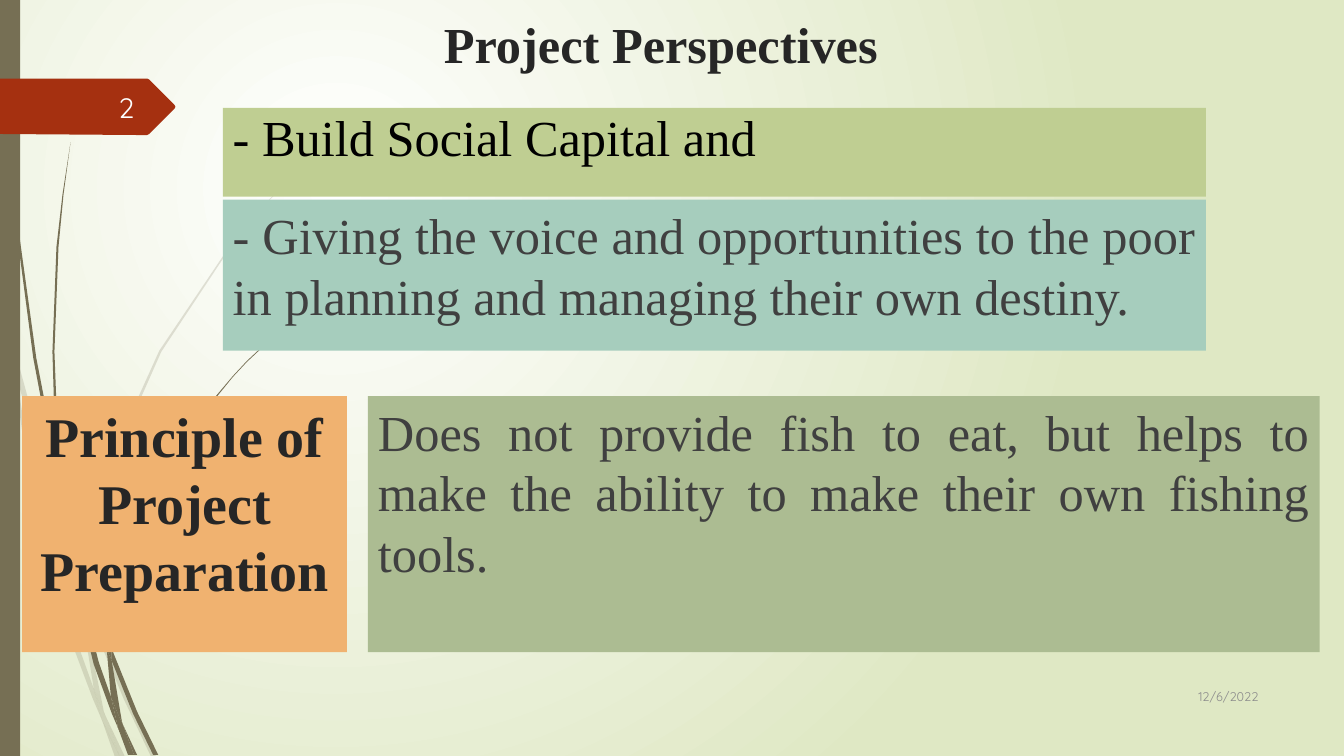
from lxml import etree
from pptx import Presentation
from pptx.dml.color import RGBColor
from pptx.enum.shapes import MSO_SHAPE
from pptx.enum.text import MSO_ANCHOR, PP_ALIGN
from pptx.oxml.ns import qn
from pptx.util import Inches, Pt

RECTANGLE = MSO_SHAPE.RECTANGLE
TOP, MIDDLE = MSO_ANCHOR.TOP, MSO_ANCHOR.MIDDLE
CENTER, RIGHT, JUSTIFY = PP_ALIGN.CENTER, PP_ALIGN.RIGHT, PP_ALIGN.JUSTIFY

WHITE = RGBColor(0xFF, 0xFF, 0xFF)
PALE_GREEN = RGBColor(0xDF, 0xE8, 0xC4)
BARK = RGBColor(0x76, 0x6F, 0x54)
RUST = RGBColor(0xA5, 0x30, 0x10)
LIME = RGBColor(0xBF, 0xCE, 0x92)
TEAL = RGBColor(0xA6, 0xCD, 0xBD)
ORANGE = RGBColor(0xF0, 0xB2, 0x70)
SAGE = RGBColor(0xAC, 0xBC, 0x92)
BLACK = RGBColor(0, 0, 0)
HEADING = RGBColor(0x26, 0x26, 0x26)
BODY = RGBColor(0x40, 0x40, 0x40)
GRAY = RGBColor(0x8C, 0x8C, 0x8C)
NUMBER = RGBColor(0xFE, 0xFF, 0xFF)

SERIF, SANS = "Times New Roman", "Quicksand"

# The grid has square cells; outlines are given in hundredths of a cell.
COLUMNS, ROWS = 13.33, 7.5
CELL = Inches(1)
FINE_CELL = CELL // 100

FAINT_STALKS = (
    ((11, 350), (9, 322), (0, 282), (0, 299), (10, 344)),
    ((58, 522), (84, 599), (85, 586), (62, 520), (14, 345), (17, 376)),
    ((92, 607), (88, 596), (88, 610), (123, 694), (150, 751), (155, 751),
     (127, 692)),
    ((119, 751), (124, 751), (105, 711)),
    ((93, 683), (70, 619), (31, 469), (17, 376), (11, 350), (28, 470),
     (65, 621), (92, 693), (101, 714), (99, 707)),
    ((84, 599), (87, 646), (93, 683), (96, 692), (105, 711), (103, 706),
     (91, 646), (88, 610), (88, 608)),
    ((88, 584), (110, 462), (160, 349), (229, 245), (268, 198), (290, 175),
     (312, 154), (312, 153), (289, 175), (268, 197), (228, 244), (158, 348),
     (107, 461), (85, 584), (85, 586), (88, 596)),
    ((101, 714), (114, 751), (119, 751)),
    ((96, 692), (93, 683), (99, 707), (101, 714), (119, 751), (105, 711)),
)
DARK_STALKS = (
    ((7, 110), (17, 233), (33, 355), (56, 477), (57, 481), (55, 457),
     (55, 453), (36, 355), (19, 232), (8, 109), (5, 48), (4, 0), (3, 0),
     (4, 48)),
    ((113, 649), (110, 641), (111, 656), (132, 708), (152, 749), (157, 749),
     (136, 706)),
    ((110, 691), (98, 657), (72, 556), (64, 505), (57, 477), (68, 557),
     (93, 659), (111, 708), (117, 722), (116, 717)),
    ((60, 472), (58, 453), (54, 349), (58, 245), (63, 193), (70, 141),
     (62, 193), (56, 245), (52, 349), (55, 449)),
    ((133, 749), (136, 749), (122, 719)),
    ((111, 633), (125, 552), (158, 476), (205, 406), (231, 374), (245, 359),
     (261, 344), (260, 344), (245, 358), (231, 373), (204, 405), (156, 474),
     (122, 551), (106, 631), (110, 641)),
    ((117, 722), (127, 749), (131, 749)),
    ((106, 645), (110, 691), (116, 706), (122, 719), (121, 716), (111, 656),
     (109, 651)),
    ((106, 645), (109, 651), (111, 656), (110, 641), (106, 631), (106, 633)),
    ((116, 706), (110, 691), (116, 717), (117, 722), (130, 749), (133, 749),
     (122, 719)),
)
NUMBER_TAG = ((173, 108), (148, 133), (146, 134), (136, 134), (0, 133),
              (0, 78), (146, 78), (148, 79), (173, 104), (174, 106))


class SlideBuilder:
    def __init__(self, page):
        self.page = page

    def background(self, inner, outer):
        """Fill the page with a circular gradient centred in its upper left."""
        fill = self.page.background.fill
        fill.gradient()
        for stop, color in zip(fill.gradient_stops, (inner, outer)):
            stop.color.rgb = color
        gradient = self.page.element.find(".//" + qn("a:gradFill"))
        gradient.remove(gradient.find(qn("a:lin")))
        circle = etree.SubElement(gradient, qn("a:path"))
        circle.set("path", "circle")
        center = etree.SubElement(circle, qn("a:fillToRect"))
        for side, share in zip("ltrb", (50, 50, 100, 100)):
            center.set(side, str(share * 1000))

    def paint(self, shape, color, opacity=100):
        shape.shadow.inherit = False
        shape.fill.solid()
        shape.fill.fore_color.rgb = color
        shape.line.fill.background()
        if opacity < 100:
            tint = shape.element.find(".//" + qn("a:srgbClr"))
            etree.SubElement(tint, qn("a:alpha")).set("val", str(opacity * 1000))

    def outline(self, points, color, opacity=100):
        builder = self.page.shapes.build_freeform(*points[0], scale=FINE_CELL)
        builder.add_line_segments(points[1:], close=True)
        self.paint(builder.convert_to_shape(), color, opacity)

    def panel(self, area, color):
        box = self.page.shapes.add_shape(RECTANGLE, *self.lengths(area))
        self.paint(box, color)
        return box

    def label(self, area):
        return self.page.shapes.add_textbox(*self.lengths(area))

    def lengths(self, area):
        return [round(cells * CELL) for cells in area]

    def add_text(self, box, text, size, color, align, font=SERIF, bold=False,
                 anchor=TOP, before=0, spacing=None):
        frame = box.text_frame
        frame.word_wrap = True
        frame.vertical_anchor = anchor
        para = frame.paragraphs[0]
        para.alignment = align
        para.space_before = Pt(before)
        para.line_spacing = spacing
        span = para.add_run()
        span.text = text
        span.font.name = font
        span.font.size = Pt(size)
        span.font.bold = bold
        span.font.color.rgb = color


def main():
    deck = Presentation()
    deck.slide_width = round(COLUMNS * CELL)
    deck.slide_height = round(ROWS * CELL)
    slide = SlideBuilder(deck.slides.add_slide(deck.slide_layouts[6]))

    slide.background(WHITE, PALE_GREEN)
    for stalk in FAINT_STALKS:
        slide.outline(stalk, BARK, opacity=20)
    for stalk in DARK_STALKS:
        slide.outline(stalk, BARK)
    slide.panel((0, 0, 0.2, ROWS), BARK)
    slide.outline(NUMBER_TAG, RUST)

    column, wide = 2.21, 9.75
    lower_row, lower_height = 3.93, 2.54
    slide.add_text(slide.label((1.68, 0.08, wide, 0.88)),
                   "Project Perspectives", 36, HEADING, CENTER, bold=True)
    slide.add_text(slide.label((11.33, 6.7, 1.25, 0.41)), "12/6/2022",
                   9, GRAY, RIGHT, font=SANS, anchor=MIDDLE)
    slide.add_text(slide.label((0.58, 0.86, 0.85, 0.4)), "2",
                   20, NUMBER, RIGHT, font=SANS, anchor=MIDDLE)
    slide.add_text(slide.panel((column, 1.07, wide, 0.88), LIME),
                   "- Build Social Capital and",
                   36, BLACK, JUSTIFY, before=10, spacing=0.9)
    slide.add_text(slide.panel((column, 1.98, wide, 1.5), TEAL),
                   "- Giving the voice and opportunities to the poor in "
                   "planning and managing their own destiny.",
                   36, BODY, JUSTIFY, before=10)
    slide.add_text(slide.panel((0.22, lower_row, 3.22, lower_height), ORANGE),
                   "Principle of Project Preparation",
                   40, HEADING, CENTER, bold=True)
    slide.add_text(slide.panel((3.65, lower_row, 9.44, lower_height), SAGE),
                   "Does not provide fish to eat, but helps to make the "
                   "ability to make their own fishing tools.",
                   36, BODY, JUSTIFY, before=10)
    deck.save("out.pptx")


if __name__ == "__main__":
    main()
